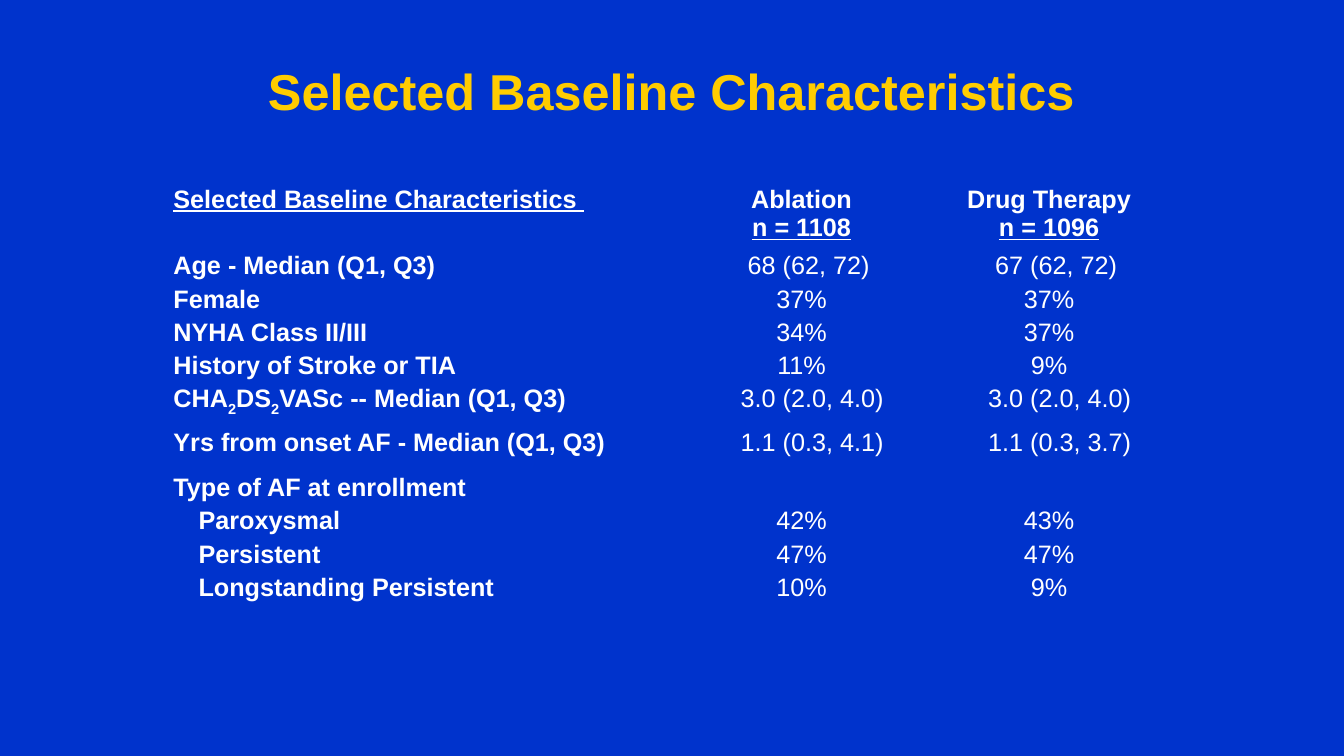
from lxml import etree
from pptx import Presentation
from pptx.dml.color import RGBColor
from pptx.enum import text
from pptx.oxml import ns
from pptx.util import Inches, Pt

BLUE = RGBColor(0x00, 0x33, 0xCC)
GOLD = RGBColor(0xFF, 0xCC, 0x00)
WHITE = RGBColor(0xFF, 0xFF, 0xFF)
NO_STYLE_NO_GRID = "{2D5ABB26-0587-4C30-8999-92F81FD0307C}"
SIDE_MARGIN = 0.05

HEADERS = ("Selected Baseline Characteristics ", "Ablation\nn = 1108", "Drug Therapy\nn = 1096")
# Label (subscripts between tildes), ablation, drug therapy, row height, label indent, value shift
ROWS = (
    ("Age - Median (Q1, Q3)", "68 (62, 72)", "67 (62, 72)", 0.33, 0, 0.14),
    ("Female", "37%", "37%", 0.33, 0, 0),
    ("NYHA Class II/III", "34%", "37%", 0.33, 0, 0),
    ("History of Stroke or TIA", "11%", "9%", 0.33, 0, 0),
    ("CHA~2~DS~2~VASc -- Median (Q1, Q3)", "3.0 (2.0, 4.0)", "3.0 (2.0, 4.0)", 0.43, 0, 0.21),
    ("Yrs from onset AF - Median (Q1, Q3)", "1.1 (0.3, 4.1)", "1.1 (0.3, 3.7)", 0.45, 0, 0.21),
    ("Type of AF at enrollment", "", "", 0.33, 0, 0),
    ("Paroxysmal", "42%", "43%", 0.33, 0.25, 0),
    ("Persistent", "47%", "47%", 0.33, 0.25, 0),
    ("Longstanding Persistent", "10%", "9%", 0.33, 0.25, 0),
)


def set_font(font, **values):
    font.color.rgb = values.pop("color", WHITE)
    for name, value in {"name": "Arial", "size": Pt(18), **values}.items():
        setattr(font, name, value)


def fill_cell(cell, content, column, bold, indent=0.0, underlined_line=None):
    """Write one paragraph per line, lowering the pieces between tildes."""
    cell.fill.background()
    cell.margin_top = cell.margin_bottom = 0
    cell.margin_left = Inches(SIDE_MARGIN + indent)
    cell.margin_right = Inches(SIDE_MARGIN)
    for line_number, line in enumerate(content.split("\n")):
        frame = cell.text_frame
        paragraph = frame.add_paragraph() if line_number else frame.paragraphs[0]
        paragraph.alignment = text.PP_ALIGN.CENTER if column else text.PP_ALIGN.LEFT
        set_font(paragraph.font, bold=bold)
        for piece_number, piece in enumerate(line.split("~")):
            if piece:
                run = paragraph.add_run()
                run.text = piece
                set_font(run.font, bold=bold, underline=line_number == underlined_line)
                if piece_number % 2:
                    run._r.get_or_add_rPr().set("baseline", "-25000")


presentation = Presentation()
presentation.slide_width, presentation.slide_height = Inches(13.33), Inches(7.5)
slide = presentation.slides.add_slide(presentation.slide_layouts[5])
slide.background.fill.solid()
slide.background.fill.fore_color.rgb = BLUE

title = slide.shapes.title
title.left, title.top, title.width, title.height = map(Inches, (2.35, 0.35, 8.62, 1.09))
title.text_frame.vertical_anchor = text.MSO_ANCHOR.MIDDLE
title_paragraph = title.text_frame.paragraphs[0]
title_paragraph.alignment = text.PP_ALIGN.CENTER
title_run = title_paragraph.add_run()
title_run.text = "Selected Baseline Characteristics"
set_font(title_run.font, size=Pt(36), bold=True, color=GOLD)
shadow = etree.fromstring(
    f'<a:effectLst {ns.nsdecls("a")}><a:outerShdw dist="38100" dir="2700000">'
    '<a:srgbClr val="000000"/></a:outerShdw></a:effectLst>'
)
title_run._r.rPr.find(ns.qn("a:solidFill")).addnext(shadow)

table = slide.shapes.add_table(
    len(ROWS) + 1, 3, Inches(1.67), Inches(1.84), Inches(9.92), Inches(4.19)
).table
table.first_row = table.horz_banding = False
table._tbl.tblPr.find(ns.qn("a:tableStyleId")).text = NO_STYLE_NO_GRID
for column, width in zip(table.columns, (5.01, 2.54, 2.37)):
    column.width = Inches(width)

table.rows[0].height = Inches(0.66)
for column, header in enumerate(HEADERS):
    fill_cell(table.cell(0, column), header, column, True, underlined_line=min(column, 1))

for row, (label, ablation, drug, height, indent, shift) in enumerate(ROWS, start=1):
    table.rows[row].height = Inches(height)
    fill_cell(table.cell(row, 0), label, 0, True, indent)
    for column, value in enumerate((ablation, drug), start=1):
        fill_cell(table.cell(row, column), value, column, False, shift)

presentation.save("out.pptx")
